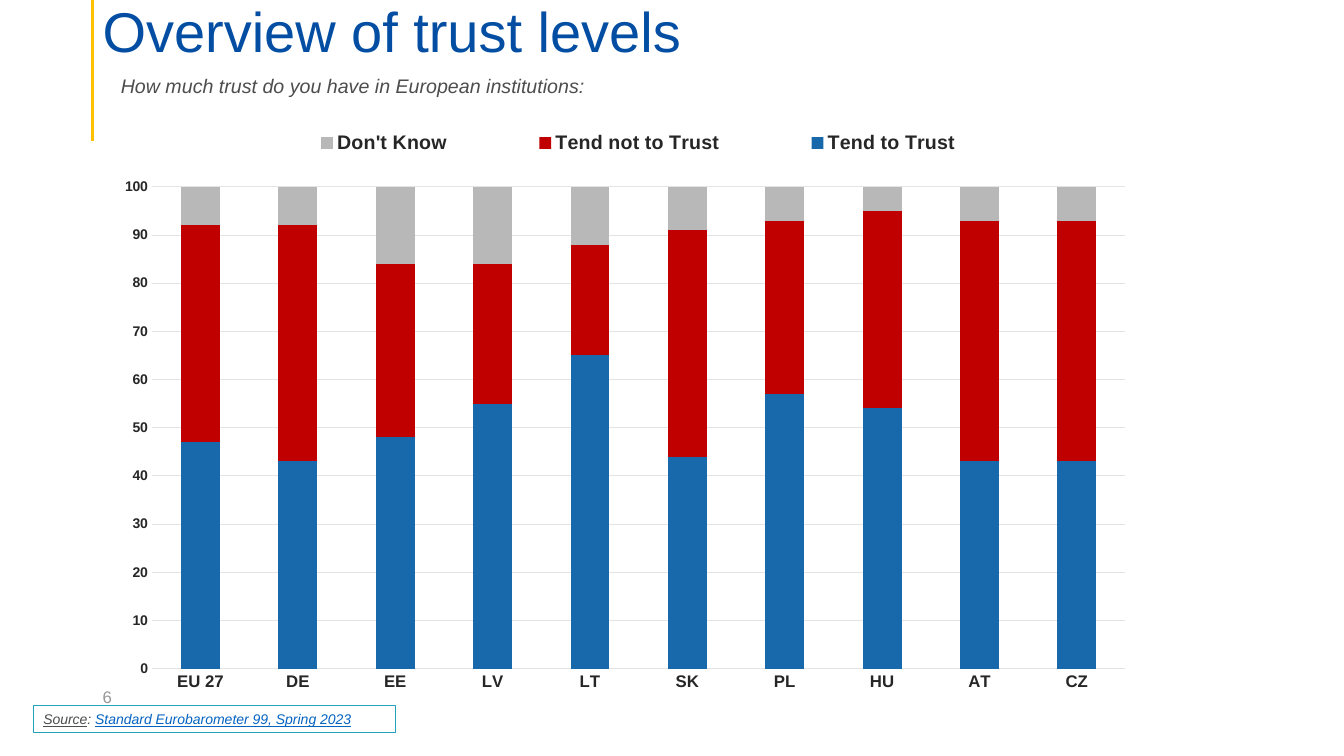
"""Build the slide on trust levels in European institutions."""
from lxml.etree import SubElement
from pptx import Presentation
from pptx.chart.data import CategoryChartData
from pptx.dml.color import RGBColor
from pptx.enum.chart import XL_CHART_TYPE, XL_LEGEND_POSITION, XL_TICK_MARK
from pptx.enum.shapes import MSO_CONNECTOR, MSO_SHAPE
from pptx.enum.text import MSO_ANCHOR, PP_ALIGN
from pptx.oxml.ns import qn
from pptx.util import Pt

FONT = "Arial"
COLORS = {
    "accent": "FFC000", "title": "034EA2", "body": "4D4D4D", "number": "979797",
    "frame": "23A2BC", "reference": "0563C1", "label": "262626", "grid": "E4E4E4",
    "trust": "1869AC", "distrust": "C00000", "unknown": "B8B8B8",
}
TITLE = [("Overview of trust levels", {"size": 40, "color": "title"})]
QUESTION = [("How much trust do you have in European institutions:",
             {"size": 14, "italic": True})]
SOURCE = [
    ("Source", {"size": 10, "italic": True, "underline": True}),
    (": ", {"size": 10, "italic": True}),
    ("Standard Eurobarometer 99, Spring 2023",
     {"size": 10, "italic": True, "underline": True, "color": "reference"}),
]
PAGE = [("6", {"size": 12, "color": "number"})]

COUNTRIES = ["EU 27", "DE", "EE", "LV", "LT", "SK", "PL", "HU", "AT", "CZ"]
ANSWERS = [
    ("Tend to Trust", "trust", [47, 43, 48, 55, 65, 44, 57, 54, 43, 43]),
    ("Tend not to Trust", "distrust", [45, 49, 36, 29, 23, 47, 36, 41, 50, 50]),
    ("Don't Know", "unknown", [8, 8, 16, 16, 12, 9, 7, 5, 7, 7]),
]
PLOT_AREA = {"x": 0.038, "y": 0.135, "w": 0.84, "h": 0.802}
LEGEND_AREA = {"x": 0.11, "y": 0.022, "w": 0.695, "h": 0.08}


def rgb(name):
    return RGBColor.from_string(COLORS[name])


def style_font(font, size, color="body", bold=False, italic=False, underline=False):
    font.name, font.size, font.bold = FONT, Pt(size), bold
    font.italic, font.underline = italic, underline
    font.color.rgb = rgb(color)


def style_line(line, color, width=0.75):
    line.color.rgb = rgb(color)
    line.width = Pt(width)


def write(shape, runs, anchor=MSO_ANCHOR.TOP):
    frame = shape.text_frame
    frame.word_wrap = True
    frame.vertical_anchor = anchor
    paragraph = frame.paragraphs[0]
    paragraph.alignment = PP_ALIGN.LEFT
    for text, style in runs:
        run = paragraph.add_run()
        run.text = text
        style_font(run.font, **style)
    return frame


def add_text(slide, box, runs, anchor=MSO_ANCHOR.TOP):
    return write(slide.shapes.add_textbox(*map(Pt, box)), runs, anchor)


def place(parent, position, area, inner=False):
    for old in parent.findall(qn("c:layout")):
        parent.remove(old)
    layout = SubElement(parent, qn("c:layout"))
    manual = SubElement(layout, qn("c:manualLayout"))
    if inner:
        SubElement(manual, qn("c:layoutTarget")).set("val", "inner")
    for side in "xy":
        SubElement(manual, qn(f"c:{side}Mode")).set("val", "edge")
    for side, share in area.items():
        SubElement(manual, qn(f"c:{side}")).set("val", str(share))
    parent.insert(position, layout)


def add_trust_chart(slide):
    data = CategoryChartData()
    data.categories = COUNTRIES
    for name, _, shares in ANSWERS:
        data.add_series(name, shares)
    chart = slide.shapes.add_chart(
        XL_CHART_TYPE.COLUMN_STACKED, *map(Pt, (77, 75.6, 828, 429.1)), data).chart
    style_font(chart.font, 10)
    chart.has_title = False

    plot = chart.plots[0]
    plot.gap_width, plot.overlap, plot.vary_by_categories = 150, 100, False
    for series, (_, color, _) in zip(plot.series, ANSWERS):
        series.format.fill.solid()
        series.format.fill.fore_color.rgb = rgb(color)

    countries, shares = chart.category_axis, chart.value_axis
    for axis, size in ((countries, 12), (shares, 10)):
        axis.major_tick_mark = axis.minor_tick_mark = XL_TICK_MARK.NONE
        style_font(axis.tick_labels.font, size, "label", bold=True)
    style_line(countries.format.line, "grid")
    shares.format.line.fill.background()
    shares.minimum_scale, shares.maximum_scale, shares.major_unit = 0, 100, 10
    shares.has_major_gridlines = True
    style_line(shares.major_gridlines.format.line, "grid")

    chart.has_legend = True
    chart.legend.position = XL_LEGEND_POSITION.RIGHT
    chart.legend.include_in_layout = False
    style_font(chart.legend.font, 14, "label", bold=True)
    space = chart._chartSpace
    place(space.find(".//" + qn("c:plotArea")), 0, PLOT_AREA, inner=True)
    place(space.find(".//" + qn("c:legend")), 1, LEGEND_AREA)


def main():
    deck = Presentation()
    deck.slide_width, deck.slide_height = Pt(960), Pt(540)
    slide = deck.slides.add_slide(deck.slide_layouts[6])

    accent = slide.shapes.add_connector(
        MSO_CONNECTOR.STRAIGHT, *map(Pt, (66.2, 0, 66.2, 100.8)))
    style_line(accent.line, "accent", 2.25)
    SubElement(accent.element.spPr, qn("a:effectLst"))

    title = add_text(slide, (66.2, 2.9, 828, 61.9), TITLE)
    title.margin_top = title.margin_bottom = 0
    title.paragraphs[0].line_spacing = 0.9

    source = slide.shapes.add_shape(
        MSO_SHAPE.RECTANGLE, *map(Pt, (23.8, 504, 258.5, 19.4)))
    source.shadow.inherit = False
    source.fill.background()
    style_line(source.line, "frame")
    write(source, SOURCE)

    add_text(slide, (79.2, 49, 836.6, 24.5), QUESTION)
    add_text(slide, (66.2, 483.1, 216, 28.8), PAGE, MSO_ANCHOR.MIDDLE)
    add_trust_chart(slide)
    deck.save("out.pptx")


if __name__ == "__main__":
    main()
